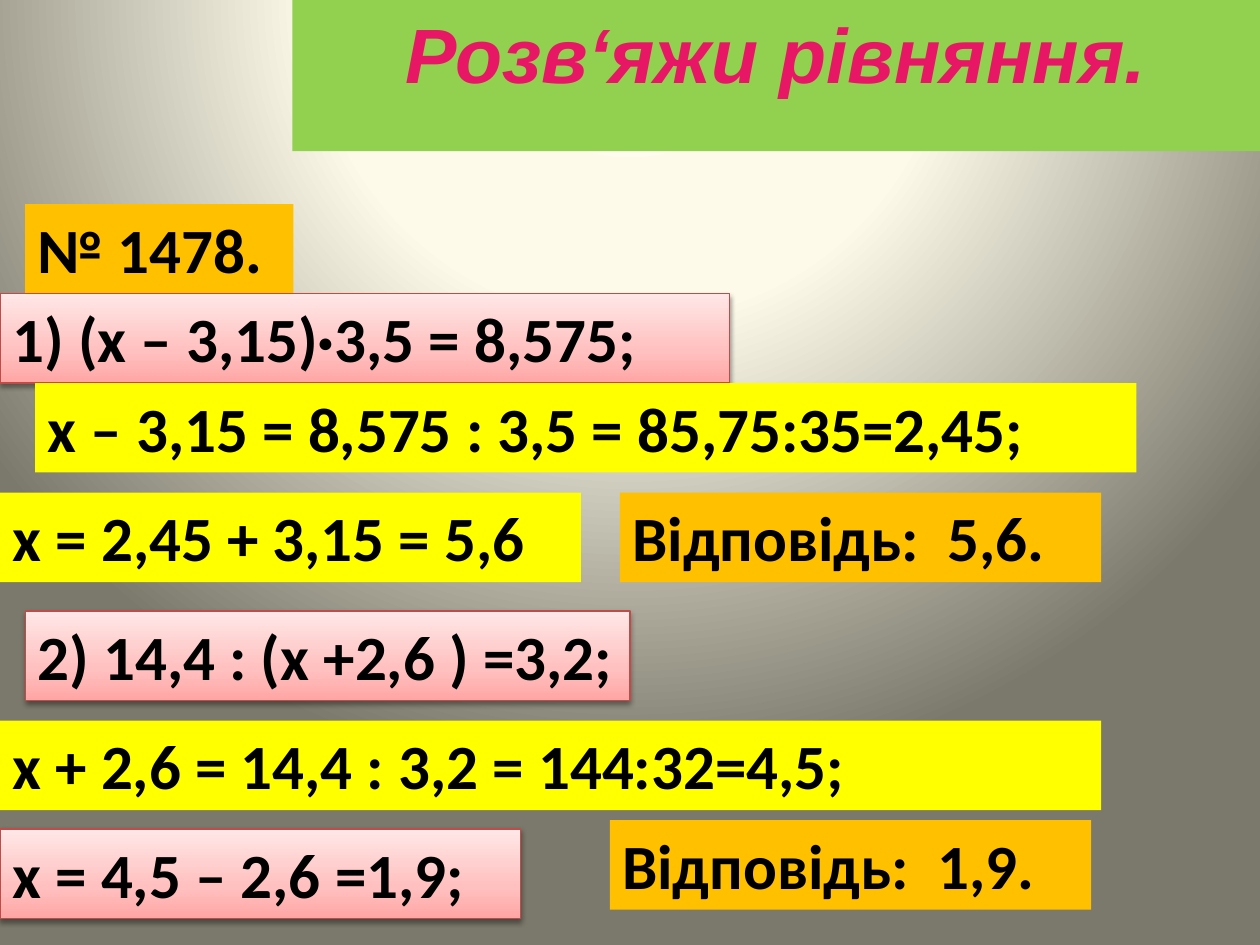
from lxml import etree
from pptx import Presentation
from pptx.dml.color import RGBColor
from pptx.enum.shapes import MSO_SHAPE as Shape
from pptx.enum.text import MSO_ANCHOR as Anchor, MSO_AUTO_SIZE as AutoSize, PP_ALIGN as Align
from pptx.oxml import parse_xml
from pptx.oxml.ns import nsdecls, qn
from pptx.util import Inches, Pt

YELLOW, ORANGE, GREEN = "FFFF00", "FFC000", "92D050"
PINK_STOPS = [(0, "FFA6A5"), (35, "FFC0BF"), (100, "FFE7E7")]
PAGE_STOPS = [(0, "FEFCEE"), (40, "FDFAEA"), (100, "7B796B")]
RAINBOW_STOPS = [(0, "A603AB"), (12, "E81766"), (27, "EE3F17"), (48, "FFFF00"),
                 (65, "1A8D48"), (79, "0819FB"), (100, "A603AB")]
ROW_HEIGHT = 0.71

# left, top, width, fill (None marks a pink equation panel), text
ROWS = [
    (0.2, 1.62, 2.13, ORANGE, "№ 1478."),
    (0, 2.33, 5.79, None, "1) (х – 3,15)·3,5 = 8,575;"),
    (0.28, 3.04, 8.74, YELLOW, "х – 3,15 = 8,575 : 3,5 = 85,75:35=2,45;"),
    (0, 3.91, 4.61, YELLOW, "х = 2,45 + 3,15 = 5,6"),
    (4.92, 3.91, 3.82, ORANGE, "Відповідь:  5,6."),
    (0.2, 4.85, 4.8, None, "2) 14,4 : (х +2,6 ) =3,2;"),
    (0, 6.58, 4.13, None, "х = 4,5 – 2,6 =1,9;"),
    (4.84, 6.51, 3.82, ORANGE, "Відповідь:  1,9."),
    (0, 5.72, 8.74, YELLOW, "х + 2,6 = 14,4 : 3,2 = 144:32=4,5;"),
]


def color(value):
    return RGBColor.from_string(value)


def linear(angle):
    return f'<a:lin ang="{angle * 60000}" scaled="0"/>'


def set_gradient(parent, stops, direction):
    """Swap the solid fill directly under parent for a gradient."""
    marks = "".join(f'<a:gs pos="{position * 1000}"><a:srgbClr val="{value}"/></a:gs>'
                    for position, value in stops)
    gradient = parse_xml(f'<a:gradFill {nsdecls("a")} rotWithShape="1">'
                         f'<a:gsLst>{marks}</a:gsLst>{direction}</a:gradFill>')
    parent.replace(parent.find(qn("a:solidFill")), gradient)


def add_shadow(box):
    effects = box.element.spPr.find(qn("a:effectLst"))
    effects.append(parse_xml(
        f'<a:outerShdw {nsdecls("a")} blurRad="{Pt(3.1)}" dist="{Pt(1.6)}" dir="5400000" '
        'rotWithShape="0"><a:srgbClr val="000000"><a:alpha val="38000"/></a:srgbClr>'
        '</a:outerShdw>'))


def add_box(page, left, top, width, height, fill, text):
    """Add a plain filled rectangle and return it with its paragraph."""
    box = page.shapes.add_shape(Shape.RECTANGLE, Inches(left), Inches(top),
                                Inches(width), Inches(height))
    box.shadow.inherit = False
    box.fill.solid()
    box.fill.fore_color.rgb = color(fill)
    box.line.fill.background()
    box.text_frame.vertical_anchor = Anchor.TOP
    para = box.text_frame.paragraphs[0]
    para.text = text
    para.font.bold = True
    return box, para


def paint_background(page):
    page.background.fill.solid()
    properties = page.element.find(".//" + qn("p:bgPr"))
    set_gradient(properties, PAGE_STOPS,
                 '<a:path path="circle"><a:fillToRect l="50000" t="-80000" '
                 'r="50000" b="180000"/></a:path>')


def add_title(page, left, top, width, height):
    box, para = add_box(page, left, top, width, height, GREEN, "Розв‘яжи рівняння.")
    box.text_frame.word_wrap = False
    para.alignment = Align.CENTER
    span = para.runs[0]
    span.font.name, span.font.size = "Arial", Pt(44)
    span.font.bold = span.font.italic = True
    span.font.fill.solid()
    span.font.fill.fore_color.rgb = color("E81766")
    properties = span.font.fill and para.runs[0]._r.get_or_add_rPr()
    set_gradient(properties, RAINBOW_STOPS, linear(0))
    outline = parse_xml(f'<a:ln {nsdecls("a")} w="{Pt(1)}"/>')
    solid = etree.SubElement(outline, qn("a:solidFill"))
    etree.SubElement(solid, qn("a:srgbClr")).set("val", "EAEAEA")
    properties.insert(0, outline)


def add_row(page, left, top, width, fill, text):
    box, para = add_box(page, left, top, width, ROW_HEIGHT, fill or PINK_STOPS[0][1], text)
    box.text_frame.word_wrap = True
    box.text_frame.auto_size = AutoSize.SHAPE_TO_FIT_TEXT
    para.alignment = Align.LEFT
    para.font.name, para.font.size = "Calibri", Pt(36)
    para.font.color.rgb = color("000000")
    if fill is None:
        set_gradient(box.element.spPr, PINK_STOPS, linear(270))
        box.line.color.rgb = color("BF4C48")
        box.line.width = Pt(0.75)
        add_shadow(box)


def main():
    deck = Presentation()
    deck.slide_width, deck.slide_height = Inches(10), Inches(7.5)
    page = deck.slides.add_slide(deck.slide_layouts[6])
    paint_background(page)
    add_title(page, 2.32, 0, 7.68, 1.2)
    for row in ROWS:
        add_row(page, *row)
    deck.save("out.pptx")


if __name__ == "__main__":
    main()
